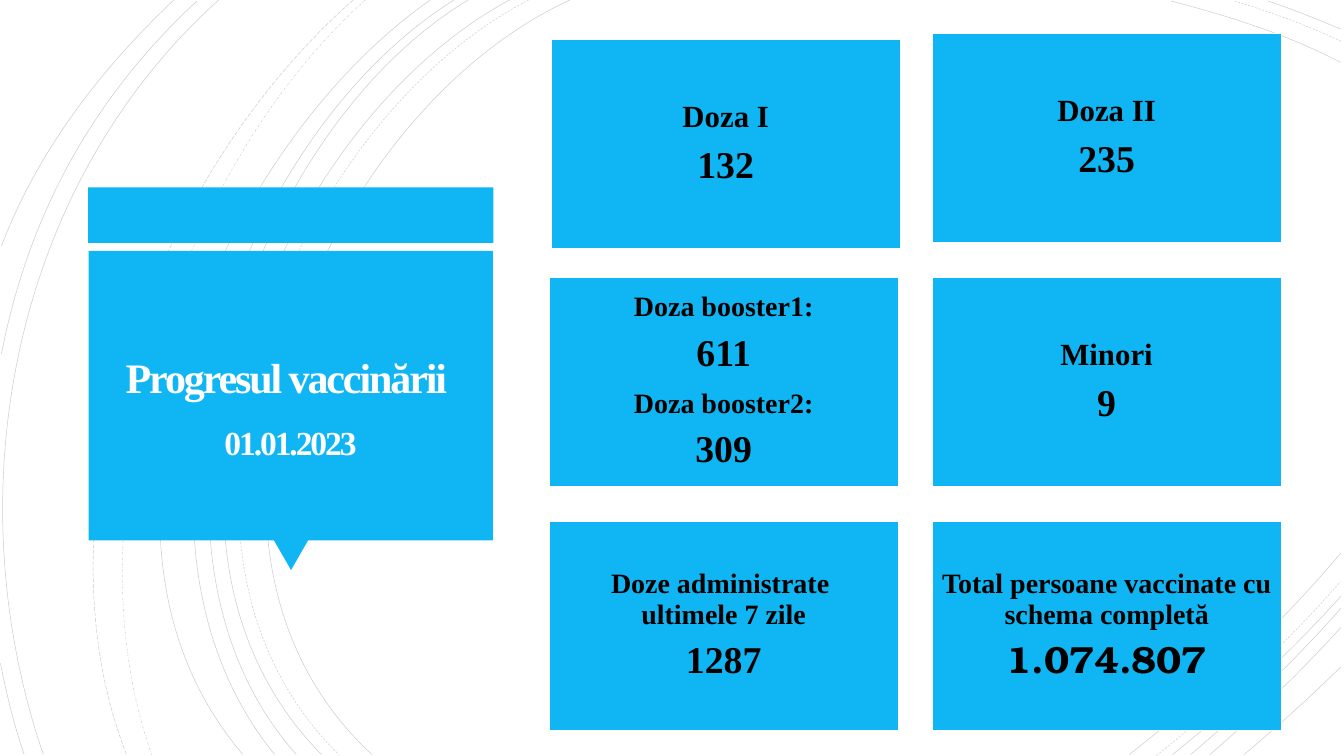
from lxml import etree
from pptx import Presentation
from pptx.dml.color import RGBColor
from pptx.enum.dml import MSO_LINE
from pptx.enum.shapes import MSO_SHAPE
from pptx.enum.text import MSO_ANCHOR, MSO_AUTO_SIZE, PP_ALIGN
from pptx.oxml.ns import qn
from pptx.util import Cm, Pt

RECTANGLE, TRIANGLE = MSO_SHAPE.RECTANGLE, MSO_SHAPE.ISOSCELES_TRIANGLE
MIDDLE, CENTER, NO_FIT = MSO_ANCHOR.MIDDLE, PP_ALIGN.CENTER, MSO_AUTO_SIZE.NONE
SOLID, DASH = MSO_LINE.SOLID, MSO_LINE.DASH
DASH_DOT, LONG_DASH = MSO_LINE.DASH_DOT, MSO_LINE.LONG_DASH

COLORS = {"accent": "10B6F4", "light": "FFFFFF", "dark": "000000"}
SERIF, WIDE_SERIF = "Times New Roman", "TeX Gyre Bonum"
CM_PER_UNIT = 2.54
ARC_ALPHA = "20000"

ARCS = [
    (SOLID, [(11.31, 0), (6.3, 2.3), (2.86, 10.8), (7.38, 14.97)]),
    (SOLID, [(26.61, 1.24), (25.56, 0.69), (24.36, 0.31), (23.24, 0.02)]),
    (SOLID, [(22.41, 14.97), (23.93, 13.79), (25.37, 12.44), (26.61, 10.97)]),
    (DASH, [(10.49, 0), (5.69, 2.49), (2.45, 10.75), (6.72, 14.97)]),
    (DASH, [(26.61, 0.82), (25.94, 0.5), (25.21, 0.24), (24.5, 0.02)]),
    (DASH, [(22.95, 14.99), (24.25, 13.95), (25.5, 12.8), (26.6, 11.54)]),
    (SOLID, [(10.11, 0), (5.39, 2.55), (2.19, 10.74), (6.38, 14.97)]),
    (SOLID, [(26.61, 0.58), (26.14, 0.38), (25.66, 0.19), (25.16, 0.02)]),
    (SOLID, [(23.27, 14.97), (24.46, 14.01), (25.59, 12.96), (26.61, 11.83)]),
    (SOLID, [(9.29, 0), (4.87, 2.66), (2.19, 10.82), (5.88, 14.97)]),
    (SOLID, [(23.63, 14.97), (24.68, 14.08), (25.69, 13.11), (26.61, 12.07)]),
    (SOLID, [(9.01, 0), (4.61, 2.75), (1.94, 10.67), (5.45, 14.97)]),
    (SOLID, [(24.01, 14.97), (24.93, 14.18), (25.8, 13.34), (26.61, 12.45)]),
    (SOLID, [(8.54, 0), (4.34, 2.93), (1.06, 10.58), (4.82, 14.97)]),
    (SOLID, [(24.69, 14.97), (25.34, 14.42), (25.99, 13.84), (26.61, 13.23)]),
    (DASH_DOT, [(7.25, 0), (3.52, 3.33), (1.31, 10.18), (3.01, 14.97)]),
    (LONG_DASH, [(7.01, 0), (3.15, 3.38), (0.57, 9.98), (2.51, 14.97)]),
    (SOLID, [(4.34, 0), (0.22, 3.7), (-0.91, 9.8), (0.86, 14.97)]),
    (SOLID, [(3.91, 0.02), (1.85, 1.92), (0.56, 4.27), (0.03, 7.02)]),
    (SOLID, [(0.01, 13.16), (0.13, 13.77), (0.28, 14.39), (0.48, 14.97)]),
    (SOLID, [(3.45, 0), (1.99, 1.38), (0.75, 2.99), (0.03, 4.88)]),
]

CARD_LEFT, CARD_TOP = 10.9, 0.66
CARD_WIDTH, CARD_HEIGHT = 6.92, 4.15
COLUMN_STEP, ROW_STEP = 7.6, 4.84
FIRST_CARD_SHIFT = (0.04, 0.12)
CARDS = [
    [("Doza I", 44, SERIF), ("132", 54, SERIF)],
    [("Doza II", 44, SERIF), ("235", 54, SERIF)],
    [("Doza booster1:", 40, SERIF), ("611", 54, SERIF),
     ("Doza booster2:", 40, SERIF), ("309", 54, SERIF)],
    [("Minori", 44, SERIF), ("9", 54, SERIF)],
    [("Doze administrate \vultimele 7 zile", 40, SERIF), ("1287", 54, SERIF)],
    [("Total persoane vaccinate cu schema completă", 40, SERIF),
     ("1.074.807", 54, WIDE_SERIF)],
]


def length(value):
    """Convert a layout unit to a slide length."""
    return Cm(value * CM_PER_UNIT)


def color(name):
    """Look up a palette colour."""
    return RGBColor.from_string(COLORS[name])


def add_arc(page, dash, points):
    """Draw one faint cubic curve from four control points."""
    places = [(length(x), length(y)) for x, y in points]
    builder = page.shapes.build_freeform(*places[0], scale=1.0)
    builder.add_line_segments(places[1:], close=False)
    arc = builder.convert_to_shape()
    arc.shadow.inherit = False
    arc.fill.background()
    arc.line.width = Pt(0.75)
    arc.line.color.rgb = color("dark")
    arc.line.dash_style = dash
    tint = arc.line._get_or_add_ln().find(".//" + qn("a:srgbClr"))
    etree.SubElement(tint, qn("a:alpha")).set("val", ARC_ALPHA)
    outline = arc._element.find(".//" + qn("a:path"))
    curve = etree.SubElement(outline, qn("a:cubicBezTo"))
    for segment in outline.findall(qn("a:lnTo")):
        curve.append(segment[0])
        outline.remove(segment)


def add_block(page, kind, left, top, width, height):
    """Draw a plain accent shape without outline."""
    block = page.shapes.add_shape(
        kind, length(left), length(top), length(width), length(height))
    block.shadow.inherit = False
    block.fill.solid()
    block.fill.fore_color.rgb = color("accent")
    block.line.fill.background()
    return block


def format_frame(frame, inset):
    """Set wrapping, anchor and equal margins of a text frame."""
    frame.word_wrap = True
    frame.auto_size = NO_FIT
    frame.vertical_anchor = MIDDLE
    frame.margin_left = frame.margin_right = length(inset)
    frame.margin_top = frame.margin_bottom = length(inset)


def add_span(para, text, size, font, tone):
    """Append one bold run to a paragraph."""
    span = para.add_run()
    span.text = text
    span.font.size = Pt(size)
    span.font.name = font
    span.font.bold = True
    span.font.color.rgb = color(tone)
    return span


def add_card(page, left, top, lines):
    """Draw a card with its labels and figures."""
    card = add_block(page, RECTANGLE, left, top, CARD_WIDTH, CARD_HEIGHT)
    card.line.color.rgb = color("light")
    card.line.width = Pt(1.25)
    frame = card.text_frame
    format_frame(frame, 0.17)
    for index, (text, size, font) in enumerate(lines):
        para = frame.add_paragraph() if index else frame.paragraphs[0]
        para.alignment = CENTER
        para.line_spacing = 0.9
        para.space_after = Pt(round(size * 0.39, 1))
        for number, part in enumerate(text.split("\v")):
            if number:
                para.add_line_break()
            add_span(para, part, size, font, "dark")


def add_title(page):
    """Place and format the title above the callout."""
    title = page.shapes.title
    page.shapes._spTree.append(title._element)
    title.left, title.top = length(1.94), length(5.14)
    title.width, title.height = length(7.65), length(5.37)
    format_frame(title.text_frame, 0.25)
    para = title.text_frame.paragraphs[0]
    para.alignment = CENTER
    para.line_spacing = 1.5
    heading = add_span(para, "Progresul vaccinării ", 60, SERIF, "light")
    para.add_line_break()
    date = add_span(para, "01.01.2023", 48, SERIF, "light")
    for span in (heading, date):
        span.font._element.set("spc", "-300")


def main():
    """Build the vaccination progress slide."""
    deck = Presentation()
    deck.slide_width, deck.slide_height = length(26.67), length(15)
    page = deck.slides.add_slide(deck.slide_layouts.get_by_name("Title Only"))
    for dash, points in ARCS:
        add_arc(page, dash, points)
    add_block(page, RECTANGLE, 1.75, 3.72, 8.04, 1.1)
    add_block(page, TRIANGLE, 5.43, 10.71, 0.69, 0.6).rotation = 180
    add_block(page, RECTANGLE, 1.76, 4.98, 8.02, 5.74)
    add_title(page)
    for index, lines in enumerate(CARDS):
        row, column = divmod(index, 2)
        shift_x, shift_y = (0, 0) if index else FIRST_CARD_SHIFT
        add_card(page, CARD_LEFT + column * COLUMN_STEP + shift_x,
                 CARD_TOP + row * ROW_STEP + shift_y, lines)
    deck.save("out.pptx")


if __name__ == "__main__":
    main()
